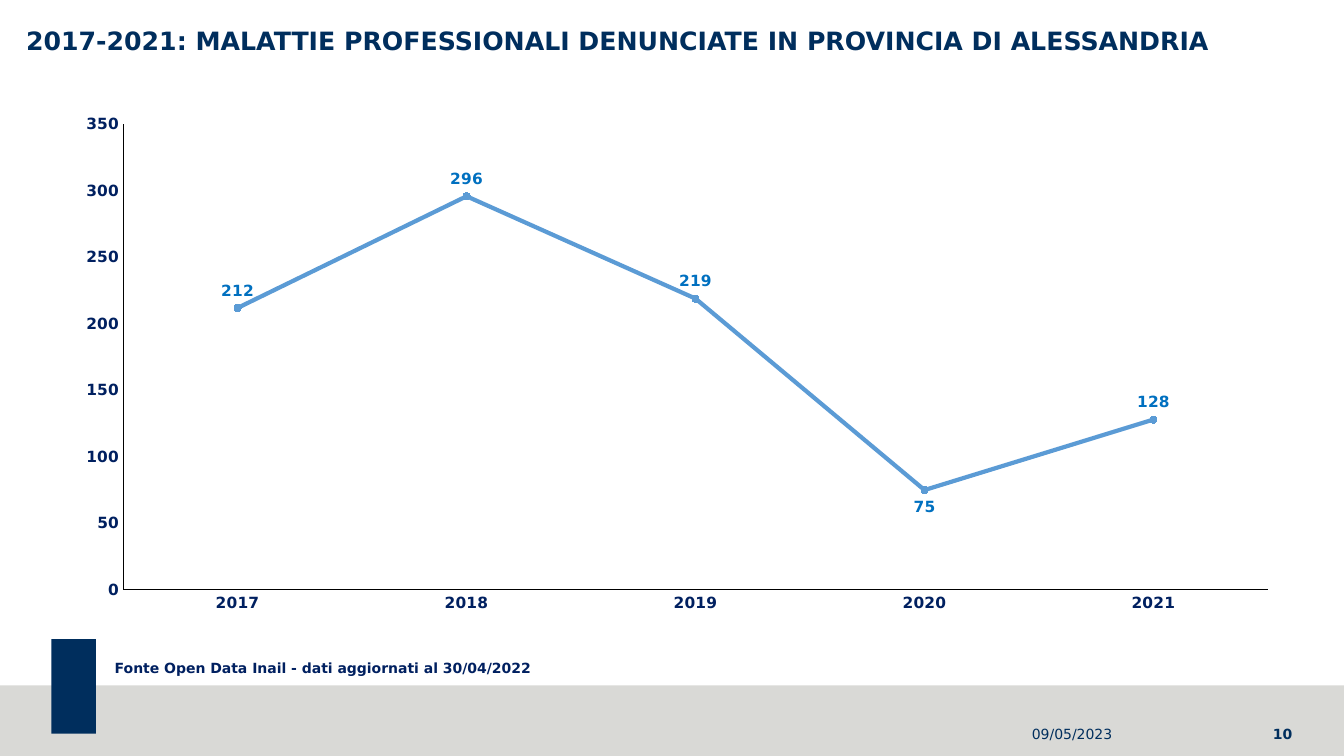
import pptx
import pptx.chart.data
import pptx.dml.color
import pptx.enum.chart
import pptx.enum.shapes
import pptx.enum.text
import pptx.oxml
import pptx.oxml.ns
import pptx.util

RGBColor = pptx.dml.color.RGBColor
NAVY = RGBColor(0x00, 0x2E, 0x5D)
DARK_BLUE = RGBColor(0x00, 0x20, 0x60)
LABEL_BLUE = RGBColor(0x00, 0x70, 0xC0)
LINE_BLUE = RGBColor(0x5B, 0x9B, 0xD5)
GREY = RGBColor(0xD9, 0xD9, 0xD6)
BLACK = RGBColor(0x00, 0x00, 0x00)

FONT = "DejaVu Sans"
WIDTH, HEIGHT = pptx.util.Inches(13.33), pptx.util.Inches(7.5)
ALIGN = pptx.enum.text.PP_ALIGN
ANCHOR = pptx.enum.text.MSO_ANCHOR

YEARS = ["2017", "2018", "2019", "2020", "2021"]
REPORTED_CASES = [212, 296, 219, 75, 128]


def area(left, top, width, height):
    """Turn percentages of the slide into a position and a size."""
    return (int(WIDTH * left / 100), int(HEIGHT * top / 100),
            int(WIDTH * width / 100), int(HEIGHT * height / 100))


def style_font(font, size, color, bold=True, name=FONT):
    font.name, font.size, font.bold = name, pptx.util.Pt(size), bold
    font.color.rgb = color


def add_block(slide, place, color):
    block = slide.shapes.add_shape(
        pptx.enum.shapes.MSO_SHAPE.RECTANGLE, *area(*place))
    block.shadow.inherit = False
    block.fill.solid()
    block.fill.fore_color.rgb = color
    block.line.fill.background()


def fill_text(frame, text, size, color, bold=True, align=ALIGN.LEFT):
    paragraph = frame.paragraphs[0]
    paragraph.alignment = align
    run = paragraph.add_run()
    run.text = text
    style_font(run.font, size, color, bold)
    return paragraph


def clear_margins(frame):
    frame.margin_left = frame.margin_right = 0
    frame.margin_top = frame.margin_bottom = 0


def set_title(slide, text):
    title = slide.shapes.title
    title.left, title.top, title.width, title.height = area(1.95, 3.73, 95.65, 10.13)
    frame = title.text_frame
    clear_margins(frame)
    frame.vertical_anchor = ANCHOR.TOP
    frame.auto_size = pptx.enum.text.MSO_AUTO_SIZE.NONE
    fill_text(frame, text, 18, NAVY).line_spacing = 0.9


def add_source_note(slide, text):
    frame = slide.shapes.add_textbox(*area(7.8, 86.53, 88.45, 3.6)).text_frame
    frame.word_wrap = True
    fill_text(frame, text, 10, DARK_BLUE)


def add_footer_text(slide, left, text, bold):
    frame = slide.shapes.add_textbox(*area(left, 94.4, 11.9, 5.33)).text_frame
    frame.word_wrap = True
    frame.vertical_anchor = ANCHOR.MIDDLE
    clear_margins(frame)
    fill_text(frame, text, 10, NAVY, bold, ALIGN.RIGHT)


def style_axis(axis):
    axis.has_major_gridlines = False
    axis.major_tick_mark = axis.minor_tick_mark = pptx.enum.chart.XL_TICK_MARK.NONE
    axis.format.line.color.rgb = BLACK
    axis.format.line.width = pptx.util.Pt(0.75)
    style_font(axis.tick_labels.font, 11, DARK_BLUE)


def fix_plot_area(chart, x, y, w, h):
    """Place the inner plot area by shares of the chart."""
    plot_area = chart.element.find(".//" + pptx.oxml.ns.qn("c:plotArea"))
    for layout in plot_area.findall(pptx.oxml.ns.qn("c:layout")):
        plot_area.remove(layout)
    plot_area.insert(0, pptx.oxml.parse_xml(
        f'<c:layout {pptx.oxml.ns.nsdecls("c")}><c:manualLayout>'
        '<c:layoutTarget val="inner"/><c:xMode val="edge"/><c:yMode val="edge"/>'
        f'<c:x val="{x}"/><c:y val="{y}"/><c:w val="{w}"/><c:h val="{h}"/>'
        '</c:manualLayout></c:layout>'))


def add_cases_chart(slide):
    data = pptx.chart.data.CategoryChartData(number_format="#,##0")
    data.categories = YEARS
    data.add_series("Series 1", REPORTED_CASES)
    chart = slide.shapes.add_chart(
        pptx.enum.chart.XL_CHART_TYPE.LINE_MARKERS,
        *area(4.58, 13.73, 91.6, 68.4), data).chart
    chart.has_legend = chart.has_title = False
    style_font(chart.font, 10, BLACK, False, "Calibri")
    fix_plot_area(chart, 0.05, 0.04, 0.93, 0.9)

    # Axes
    for axis in (chart.category_axis, chart.value_axis):
        style_axis(axis)
    cases_axis = chart.value_axis
    cases_axis.minimum_scale, cases_axis.maximum_scale = 0, 350
    cases_axis.major_unit = 50
    cases_axis.tick_labels.number_format = "#,##0"
    cases_axis.tick_labels.number_format_is_linked = False

    # Line and markers
    plot = chart.plots[0]
    plot.vary_by_categories = False
    cases = plot.series[0]
    cases.smooth = False
    cases.format.line.color.rgb = LINE_BLUE
    cases.format.line.width = pptx.util.Pt(3)
    cases.marker.style = pptx.enum.chart.XL_MARKER_STYLE.CIRCLE
    cases.marker.size = 5
    cases.marker.format.fill.solid()
    cases.marker.format.fill.fore_color.rgb = LINE_BLUE
    cases.marker.format.line.color.rgb = LINE_BLUE

    # Value labels, with the lowest year labelled under its point
    labels = cases.data_labels
    labels.show_value = True
    labels.number_format = "#,##0"
    labels.number_format_is_linked = False
    labels.position = pptx.enum.chart.XL_LABEL_POSITION.ABOVE
    style_font(labels.font, 11, LABEL_BLUE)
    lowest = REPORTED_CASES.index(min(REPORTED_CASES))
    lowest_label = cases.points[lowest].data_label
    style_font(lowest_label.font, 11, LABEL_BLUE)
    lowest_label.position = pptx.enum.chart.XL_LABEL_POSITION.BELOW


def main():
    deck = pptx.Presentation()
    deck.slide_width, deck.slide_height = WIDTH, HEIGHT
    slide = deck.slides.add_slide(deck.slide_layouts[5])

    # Footer band and navy marker
    add_block(slide, (0, 90.67, 100, 9.33), GREY)
    add_block(slide, (3.83, 84.53, 3.3, 12.53), NAVY)

    # Title, chart and source
    set_title(slide, "2017-2021: MALATTIE PROFESSIONALI DENUNCIATE "
                     "IN PROVINCIA DI ALESSANDRIA")
    add_cases_chart(slide)
    add_source_note(slide, "Fonte Open Data Inail - dati aggiornati al 30/04/2022")

    # Date and page number
    add_footer_text(slide, 70.85, "09/05/2023", False)
    add_footer_text(slide, 84.25, "10", True)

    deck.save("out.pptx")


if __name__ == "__main__":
    main()
